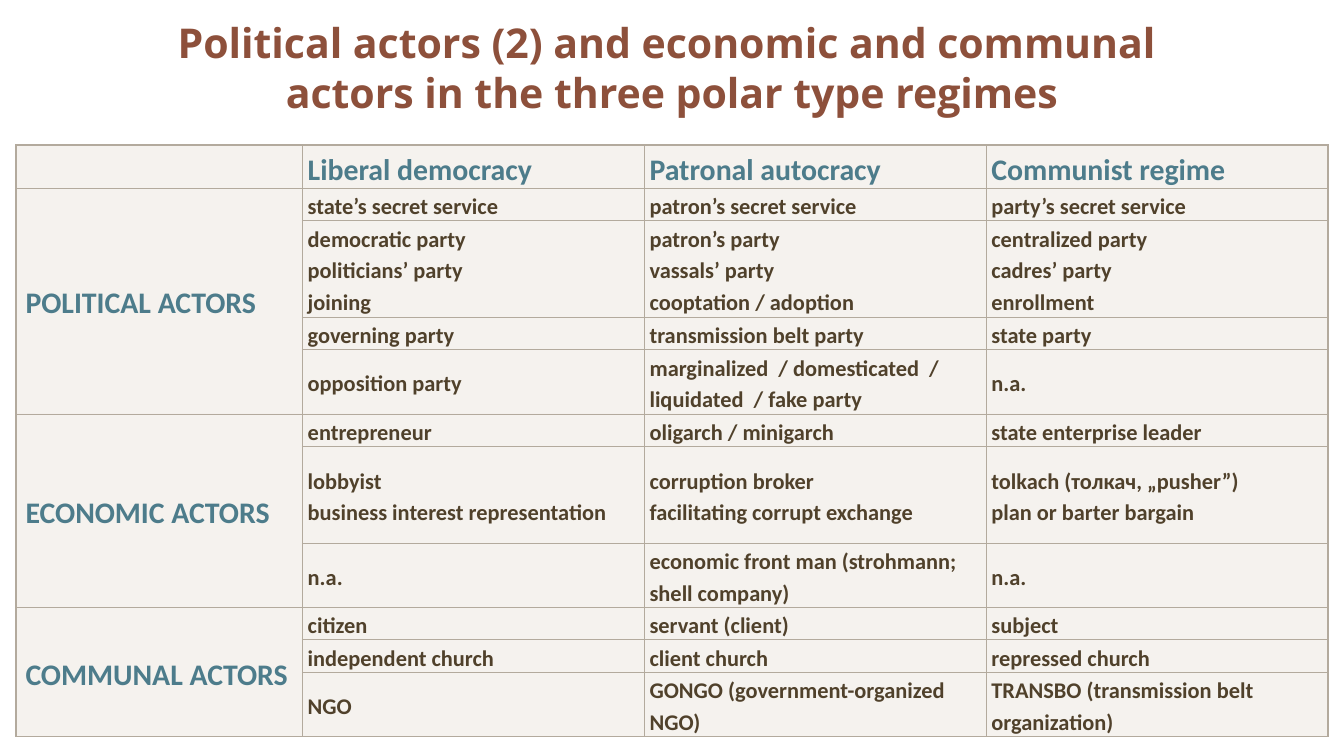
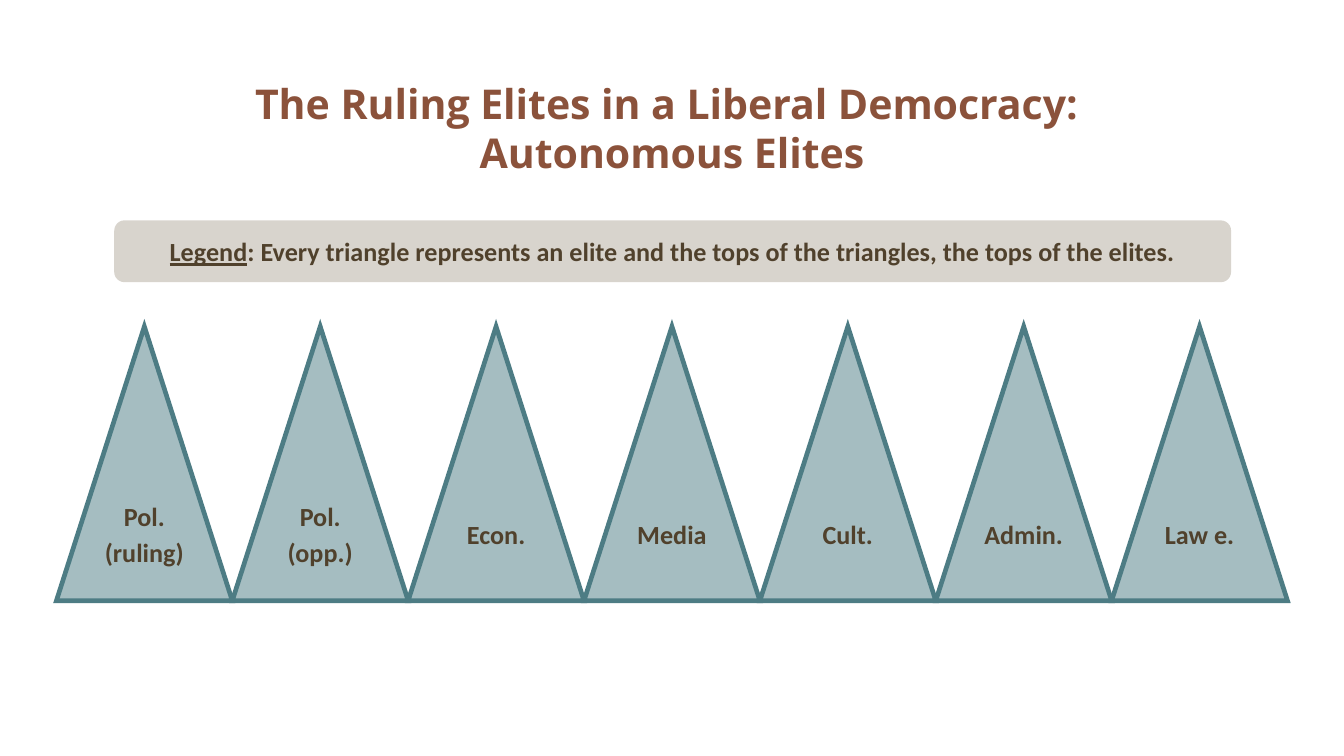
"""Build two slides on actors and elites in polar type regimes."""
import pptx
import pptx.util
import pptx.dml.color
import pptx.enum.shapes
import pptx.enum.text
import pptx.oxml
import pptx.oxml.ns
from pptx.util import Inches

RUST, CLAY = "8D503B", "8B523B"
TEAL, PINE = "4D7C8B", "4D7C84"
BROWN, BARK = "50412B", "50412C"
SAND, CREAM = "B3AA9D", "EFEAE4"
HEAD, BODY = "Open Sans", "Calibri"
MID = pptx.enum.text.MSO_ANCHOR.MIDDLE
CENTER = pptx.enum.text.PP_ALIGN.CENTER
SHAPE = pptx.enum.shapes.MSO_SHAPE

EDGE, SPAN = 0.12, 9.76
FIRST = 2.13
COLS = [FIRST] + [(SPAN - FIRST) / 3] * 3
LINE = 0.24
HEADS = ["", "Liberal democracy", "Patronal autocracy", "Communist regime"]
GROUPS = [
    ("POLITICAL ACTORS", [
        (1, "state’s secret service", "patron’s secret service", "party’s secret service"),
        (3, "democratic party\npoliticians’ party\njoining",
         "patron’s party\nvassals’ party\ncooptation / adoption",
         "centralized party\ncadres’ party\nenrollment"),
        (1, "governing party", "transmission belt party", "state party"),
        (2, "opposition party",
         "marginalized  / domesticated  / liquidated  / fake party", "n.a."),
    ]),
    ("ECONOMIC ACTORS", [
        (1, "entrepreneur", "oligarch / minigarch", "state enterprise leader"),
        (3, "lobbyist\vbusiness interest representation",
         "corruption broker\nfacilitating corrupt exchange",
         "tolkach (толкач, „pusher”)\nplan or barter bargain"),
        (2, "n.a.", "economic front man (strohmann; shell company)", "n.a."),
    ]),
    ("COMMUNAL ACTORS", [
        (1, "citizen", "servant (client)", "subject"),
        (1, "independent church", "client church", "repressed church"),
        (2, "NGO", "GONGO (government-organized NGO)",
         "TRANSBO (transmission belt organization)"),
    ]),
]
ELITES = ["Pol. (ruling)", "Pol. (opp.)", "Econ.", "Media", "Cult.", "Admin.", "Law e."]


def color(code):
    return pptx.dml.color.RGBColor.from_string(code)


def node(tag, attrs=""):
    return pptx.oxml.parse_xml(f'<a:{tag} {pptx.oxml.ns.nsdecls("a")} {attrs}/>')


def style(par, size, code, face=BODY, space=None, align=None, after=None):
    par.font.name = face
    par.font.size = pptx.util.Pt(size)
    par.font.bold = True
    par.font.color.rgb = color(code)
    if space:
        par.line_spacing = space
    if align:
        par.alignment = align
    if after:
        par.space_after = pptx.util.Pt(after)


def tint(fill, props, code, alpha):
    fill.solid()
    fill.fore_color.rgb = color(code)
    tone = props.find(pptx.oxml.ns.qn("a:solidFill"))[0]
    tone.append(node("alpha", f'val="{alpha * 1000}"'))


def add_slide(deck, text, code, top, height):
    slide = deck.slides.add_slide(deck.slide_layouts[5])
    title = slide.shapes.title
    title.left, title.top = Inches(EDGE), Inches(top)
    title.width, title.height = Inches(SPAN), Inches(height)
    frame = title.text_frame
    frame.text = text
    frame.word_wrap = True
    frame.vertical_anchor = MID
    style(frame.paragraphs[0], 22, code, HEAD, align=CENTER)
    return slide


def add_edges(cell, widths):
    props = cell._tc.get_or_add_tcPr()
    for side, width in zip("LRTB", widths):
        line = node(f"ln{side}", f'w="{pptx.util.Pt(width)}"')
        fill = node("solidFill")
        fill.append(node("srgbClr", f'val="{SAND}"'))
        line.append(fill)
        props.append(line)
    return props


def fill_cell(table, row, col, text, label):
    cell = table.cell(row, col)
    end = row + cell.span_height
    outer = (col == 0, col == len(COLS) - 1, row == 0, end == len(table.rows))
    props = add_edges(cell, [1 if edge else 0.5 for edge in outer])
    tint(cell.fill, props, CREAM, 60)
    cell.vertical_anchor = MID
    cell.margin_left = Inches(0.04 if col else 0.07)
    cell.margin_right = Inches(0.04 if col else 0)
    cell.margin_top = pptx.util.Pt(0.5 if col else 0)
    cell.margin_bottom = 0
    cell.text_frame.text = text
    for par in cell.text_frame.paragraphs:
        style(par, 16 if label else 12, TEAL if label else BROWN, space=1.15)


def add_grid(slide):
    rows, spans = [HEADS], []
    heights = [0.32]
    for name, items in GROUPS:
        spans.append((len(rows), len(rows) + len(items) - 1))
        for place, (lines, *texts) in enumerate(items):
            rows.append(["" if place else name, *texts])
            heights.append(lines * LINE)
    table = slide.shapes.add_table(
        len(rows), len(COLS), Inches(EDGE), Inches(1.08),
        Inches(SPAN), Inches(sum(heights))).table
    table.first_row = table.horz_banding = False
    for col, width in zip(table.columns, COLS):
        col.width = Inches(width)
    for row, height in zip(table.rows, heights):
        row.height = Inches(height)
    for first, last in spans:
        table.cell(first, 0).merge(table.cell(last, 0))
    for row, texts in enumerate(rows):
        for col, text in enumerate(texts):
            fill_cell(table, row, col, text, row == 0 or col == 0)


def add_block(slide, kind, box, text, code, space=None):
    shape = slide.shapes.add_shape(kind, *map(Inches, box))
    shape.shadow.inherit = False
    tint(shape.fill, shape.element.spPr, code, 50)
    shape.line.fill.background()
    frame = shape.text_frame
    frame.word_wrap = True
    frame.vertical_anchor = MID
    frame.margin_left = frame.margin_right = 0
    frame.margin_top = frame.margin_bottom = 0
    frame.text = text
    style(frame.paragraphs[0], 14, BARK, BODY, space, CENTER, 10)
    return shape


def add_legend(slide):
    shape = add_block(slide, SHAPE.ROUNDED_RECTANGLE, (0.85, 1.64, 8.31, 0.46), "Legend", SAND)
    par = shape.text_frame.paragraphs[0]
    par.runs[0].font.underline = True
    par.add_run().text = (": Every triangle represents an elite and the tops of "
                          "the triangles, the tops of the elites.")


def add_peaks(slide):
    left, right = 0.42, 9.58
    width = (right - left) / len(ELITES)
    for place, name in enumerate(ELITES):
        box = (left + place * width, 2.43, width, 2.04)
        peak = add_block(slide, SHAPE.ISOSCELES_TRIANGLE, box, name, PINE, 1.15)
        peak.line.color.rgb = color(PINE)
        peak.line.width = pptx.util.Pt(2.5)
        line = peak.element.spPr.find(pptx.oxml.ns.qn("a:ln"))
        line.append(node("miter", 'lim="800000"'))


def main():
    deck = pptx.Presentation()
    deck.slide_width = Inches(10)
    deck.slide_height = deck.slide_width * 9 // 16
    actors = add_slide(deck, "Political actors (2) and economic and communal \v"
                       "actors in the three polar type regimes", RUST, 0, 1)
    add_grid(actors)
    elites = add_slide(deck, "The Ruling Elites in a Liberal Democracy: \v"
                       "Autonomous Elites", CLAY, 0.25, 1.4)
    add_legend(elites)
    add_peaks(elites)
    deck.save("out.pptx")


if __name__ == "__main__":
    main()
